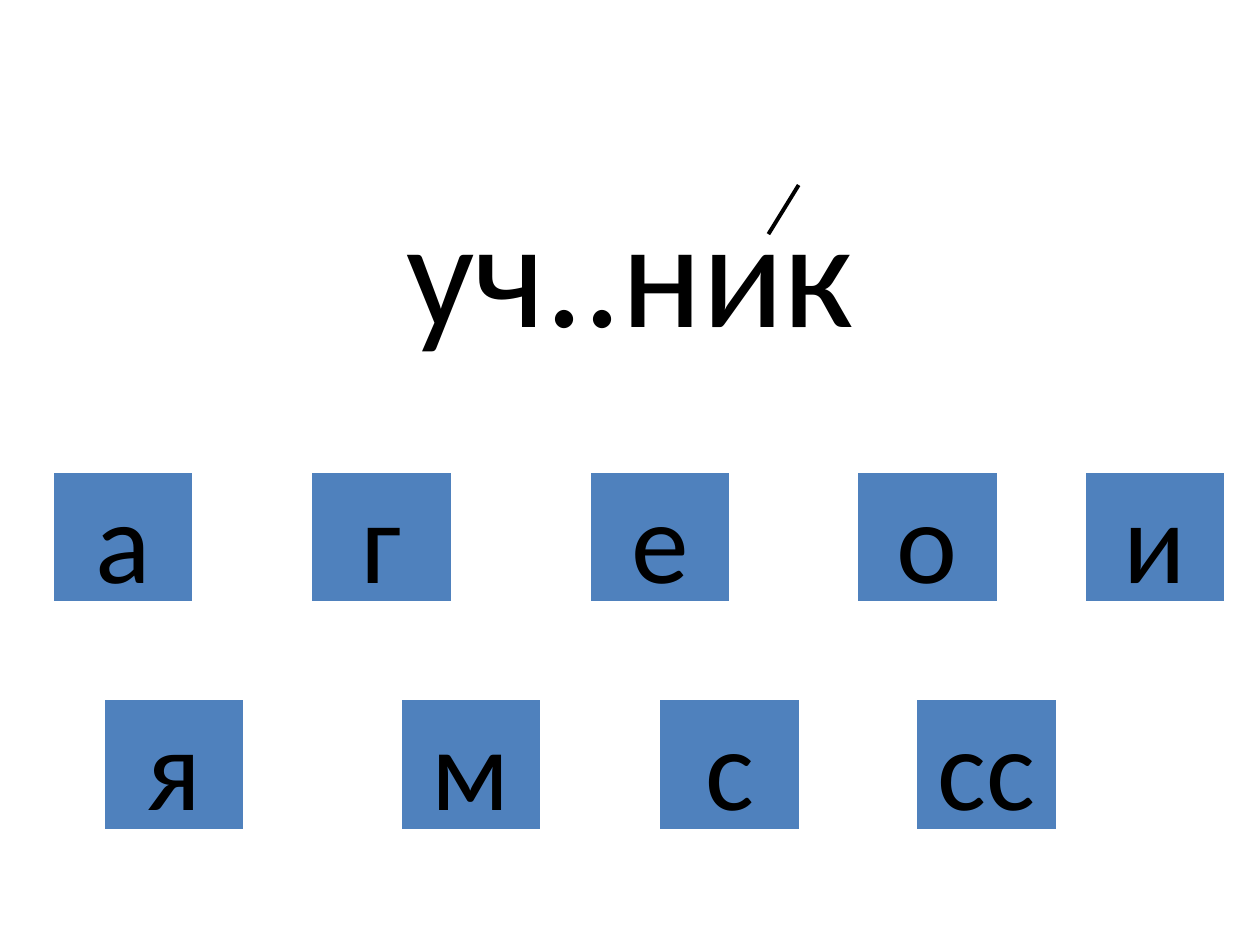
from typing import NamedTuple

from lxml.etree import SubElement
from pptx import Presentation
from pptx.dml.color import RGBColor as Rgb
from pptx.enum.shapes import MSO_CONNECTOR as Link, MSO_SHAPE as Kind
from pptx.enum.text import MSO_ANCHOR as Anchor, MSO_AUTO_SIZE as Fit, PP_ALIGN as Align
from pptx.oxml.ns import qn
from pptx.slide import Slide
from pptx.text.text import TextFrame
from pptx.util import Cm, Pt

COLORS = {"ink": "000000", "tile": "4F81BD"}
FONT = "Calibri"
TILE_W, TILE_H = Cm(2.79), Cm(2.59)


class Tile(NamedTuple):
    text: str
    left: float


class Row(NamedTuple):
    top: float
    tiles: list[Tile]


ROWS = [
    Row(14.12, [Tile("я", 2.11), Tile("м", 8.1), Tile("с", 13.31), Tile("сс", 18.49)]),
    Row(9.53, [Tile("а", 1.09), Tile("г", 6.3), Tile("е", 11.91),
               Tile("о", 17.3), Tile("и", 21.89)]),
]


def write(frame: TextFrame, text: str, size: float, wrap: bool) -> None:
    frame.auto_size = Fit.NONE
    frame.word_wrap = wrap
    frame.vertical_anchor = Anchor.MIDDLE
    para = frame.paragraphs[0]
    para.alignment = Align.CENTER
    run = para.add_run()
    run.text = text
    run.font.name = FONT
    run.font.size = Pt(size)
    run.font.color.rgb = Rgb.from_string(COLORS["ink"])


def add_title(slide: Slide, text: str) -> None:
    title = slide.shapes.title
    title.left, title.top = Cm(1.91), Cm(3.33)
    title.width, title.height = Cm(21.59), Cm(4.09)
    write(title.text_frame, text, 86.4, True)


def add_tile(slide: Slide, tile: Tile, top: float) -> None:
    shape = slide.shapes.add_shape(
        Kind.ACTION_BUTTON_CUSTOM, Cm(tile.left), Cm(top), TILE_W, TILE_H)
    shape.shadow.inherit = False
    shape.fill.solid()
    shape.fill.fore_color.rgb = Rgb.from_string(COLORS["tile"])
    shape.line.fill.background()
    write(shape.text_frame, tile.text, 66, False)


def add_stress(slide: Slide) -> None:
    """Draw the stress mark over the vowel."""
    mark = slide.shapes.add_connector(
        Link.STRAIGHT, Cm(16.1), Cm(3.73), Cm(15.49), Cm(4.72))
    mark.line.color.rgb = Rgb.from_string(COLORS["ink"])
    mark.line.width = Pt(2.25)
    SubElement(mark._element.spPr, qn("a:effectLst"))


def main() -> None:
    deck = Presentation()
    deck.slide_width, deck.slide_height = Cm(25.4), Cm(19.05)
    slide = deck.slides.add_slide(deck.slide_layouts[0])
    sub = slide.placeholders[1].element
    sub.getparent().remove(sub)

    add_title(slide, "уч..ник")
    for row in ROWS:
        for tile in row.tiles:
            add_tile(slide, tile, row.top)
    add_stress(slide)
    deck.save("out.pptx")


if __name__ == "__main__":
    main()
